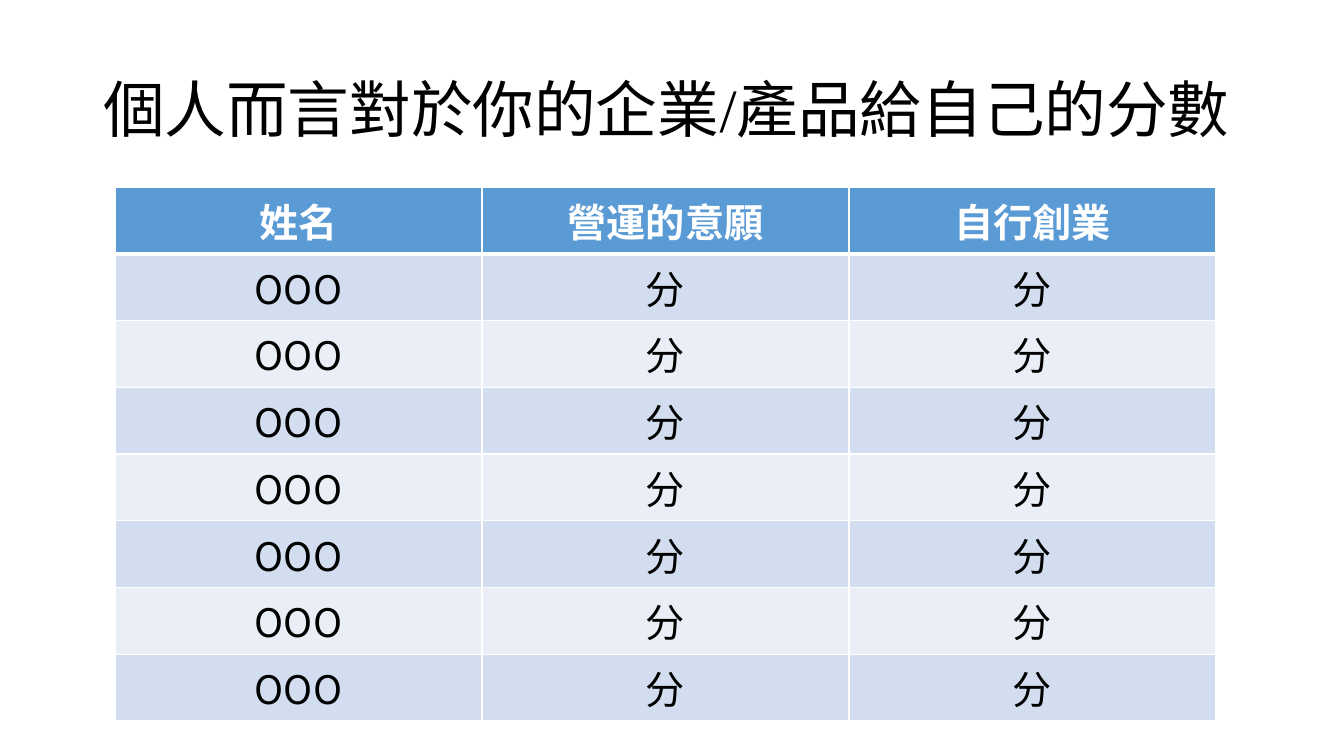
from lxml import etree
from pptx import Presentation
from pptx.dml.color import RGBColor
from pptx.enum.text import MSO_ANCHOR, MSO_AUTO_SIZE, PP_ALIGN
from pptx.oxml.ns import qn
from pptx.util import Pt

PX = 914400 / 100.8
LEFT, CENTER = PP_ALIGN.LEFT, PP_ALIGN.CENTER
MIDDLE = MSO_ANCHOR.MIDDLE
NO_AUTOFIT = MSO_AUTO_SIZE.NONE

BLACK = RGBColor(0x00, 0x00, 0x00)
WHITE = RGBColor(0xFF, 0xFF, 0xFF)
HEADER_BLUE = RGBColor(0x5B, 0x9B, 0xD5)
BANDS = [RGBColor(0xEA, 0xEF, 0xF7), RGBColor(0xD2, 0xDE, 0xEF)]
CJK_FONT = "Noto Sans CJK SC"
TITLE_FONT = "Times New Roman"


def format_text(p, name, size, color, bold, align):
    p.alignment = align
    p.font.name = name
    p.font.size = Pt(size)
    p.font.bold = bold
    p.font.color.rgb = color
    props = p._p.pPr.find(qn("a:defRPr"))
    etree.SubElement(props, qn("a:ea"), typeface=CJK_FONT)


def set_borders(cell, widths):
    tc_pr = cell._tc.get_or_add_tcPr()
    for i, (side, width) in enumerate(widths.items()):
        ln = etree.Element(qn(f"a:ln{side}"), w=str(Pt(width)))
        fill = etree.SubElement(ln, qn("a:solidFill"))
        etree.SubElement(fill, qn("a:srgbClr"), val=str(WHITE))
        tc_pr.insert(i, ln)


prs = Presentation()
prs.slide_width, prs.slide_height = round(1344 * PX), round(756 * PX)
s = prs.slides.add_slide(prs.slide_layouts[5])

# Title
title = s.shapes.title
title.left, title.top, title.width, title.height = (
    round(v * PX) for v in (93, 40, 1159, 146))
tf = title.text_frame
tf.text = "個人而言對於你的企業/產品給自己的分數"
tf.word_wrap = True
tf.auto_size = NO_AUTOFIT
tf.vertical_anchor = MIDDLE
p = tf.paragraphs[0]
p.line_spacing = 0.9
format_text(p, TITLE_FONT, 44, BLACK, False, LEFT)

# Score table
rows = [["姓名", "營運的意願", "自行創業"]] + [["OOO", "分", "分"]] * 7
table = s.shapes.add_table(
    len(rows), 3, *(round(v * PX) for v in (115, 187, 1101, 520))).table
for col in table.columns:
    col.width = round(367 * PX)
for i, row in enumerate(rows):
    table.rows[i].height = round(65 * PX)
    header = i == 0
    for j, text in enumerate(row):
        cell = table.cell(i, j)
        cell.text = text
        cell.vertical_anchor = MIDDLE
        cell.fill.solid()
        cell.fill.fore_color.rgb = HEADER_BLUE if header else BANDS[i % 2]
        set_borders(cell, {"L": 1, "R": 1, "T": 3 if i == 1 else 1,
                           "B": 3 if header else 1})
        format_text(cell.text_frame.paragraphs[0], CJK_FONT, 28,
                    WHITE if header else BLACK, header, CENTER)

prs.save("out.pptx")
